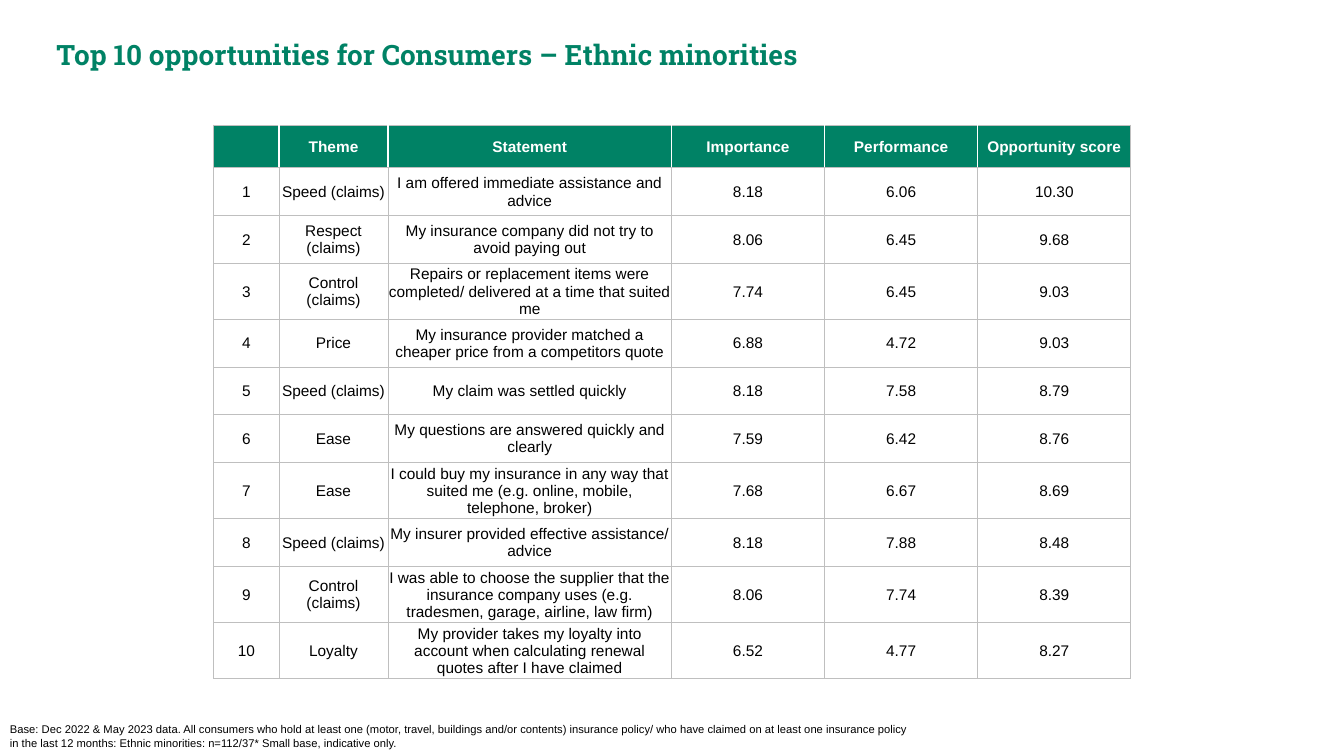
"""Build a slide that ranks ten insurance opportunities in a table."""
from lxml import etree
from pptx import Presentation
from pptx import util as u
from pptx.dml import color
from pptx.enum import text
from pptx.oxml import ns

HEADS = ["", "Theme", "Statement", "Importance", "Performance", "Opportunity score"]
ROWS = [
    ("Speed (claims)", "I am offered immediate assistance and advice", 8.18, 6.06, 10.30),
    ("Respect (claims)", "My insurance company did not try to avoid paying out", 8.06, 6.45, 9.68),
    ("Control (claims)", "Repairs or replacement items were completed/ delivered at a time that suited me",
     7.74, 6.45, 9.03),
    ("Price", "My insurance provider matched a cheaper price from a competitors quote", 6.88, 4.72, 9.03),
    ("Speed (claims)", "My claim was settled quickly", 8.18, 7.58, 8.79),
    ("Ease", "My questions are answered quickly and clearly", 7.59, 6.42, 8.76),
    ("Ease", "I could buy my insurance in any way that suited me (e.g. online, mobile, telephone, broker)",
     7.68, 6.67, 8.69),
    ("Speed (claims)", "My insurer provided effective assistance/ advice", 8.18, 7.88, 8.48),
    ("Control (claims)", "I was able to choose the supplier that the insurance company uses "
     "(e.g. tradesmen, garage, airline, law firm)", 8.06, 7.74, 8.39),
    ("Loyalty", "My provider takes my loyalty into account when calculating renewal quotes "
     "after I have claimed", 6.52, 4.77, 8.27),
]
BASE = ("Base: Dec 2022 & May 2023 data. All consumers who hold at least one (motor, travel, buildings "
        "and/or contents) insurance policy/ who have claimed on at least one insurance policy in the last "
        "12 months: Ethnic minorities: n=112/37* Small base, indicative only.")


def rgb(code):
    return color.RGBColor.from_string(code)


def write(frame, words, size=11, font="Arial", ink="000000", bold=False, align=text.PP_ALIGN.LEFT):
    frame.word_wrap = True
    para = frame.paragraphs[0]
    para.alignment = align
    para.font.size = u.Pt(size)
    if words:
        run = para.add_run()
        run.text = words
        run.font.size = u.Pt(size)
        run.font.name = font
        run.font.bold = bold
        run.font.color.rgb = rgb(ink)


class Deck:
    green, grey, white = "008265", "BFBFBF", "FFFFFF"

    def __init__(self):
        self.show = Presentation()
        self.show.slide_width, self.show.slide_height = u.Cm(33.87), u.Cm(19.05)
        self.slide = self.show.slides.add_slide(self.show.slide_layouts[6])

    def label(self, words, left, top, width, height, **style):
        box = self.slide.shapes.add_textbox(*map(u.Cm, (left, top, width, height)))
        write(box.text_frame, words, **style)

    def edge(self, cell, side, ink, points):
        line = etree.SubElement(cell._tc.get_or_add_tcPr(), ns.qn("a:ln" + side), w=str(u.Pt(points)))
        fill = etree.SubElement(line, ns.qn("a:solidFill"))
        etree.SubElement(fill, ns.qn("a:srgbClr"), val=ink)

    def cell(self, cell, words, head, inner):
        cell.margin_left = cell.margin_top = cell.margin_right = u.Cm(0.02)
        cell.margin_bottom = 0
        cell.vertical_anchor = text.MSO_ANCHOR.MIDDLE
        for side in "LRTB":
            pale = head and side in inner
            self.edge(cell, side, self.white if pale else self.grey, 1 if pale else 0.75)
        cell.fill.solid()
        cell.fill.fore_color.rgb = rgb(self.green if head else self.white)
        write(cell.text_frame, words, ink=self.white if head else "000000", bold=head,
              align=text.PP_ALIGN.CENTER)

    def table(self, rows, left, top, widths, heights):
        frame = self.slide.shapes.add_table(len(rows), len(widths), u.Cm(left), u.Cm(top),
                                            u.Cm(sum(widths)), u.Cm(sum(heights)))
        grid = frame.table
        grid.horz_banding = False
        for col, width in zip(grid.columns, widths):
            col.width = u.Cm(width)
        last = len(widths) - 1
        for r, (row, height) in enumerate(zip(rows, heights)):
            grid.rows[r].height = u.Cm(height)
            for c, words in enumerate(row):
                inner = ("L" if c else "") + ("R" if c < last else "")
                self.cell(grid.cell(r, c), words, r == 0, inner)


def main():
    deck = Deck()
    deck.label("Top 10 opportunities for Consumers – Ethnic minorities", 1.17, 0.81, 31.19, 1.12,
               size=20, font="Roboto Slab", ink=deck.green, bold=True)
    body = [[str(rank), theme, claim, *(f"{score:.2f}" for score in scores)]
            for rank, (theme, claim, *scores) in enumerate(ROWS, 1)]
    deck.table([HEADS] + body, 5.39, 3.15, [1.64, 2.75, 7.14] + [3.86] * 3,
               [1.08] + [1.2] * len(body))
    deck.label(BASE, 0, 18.08, 23.44, 0.97, size=8)
    deck.show.save("out.pptx")


if __name__ == "__main__":
    main()
